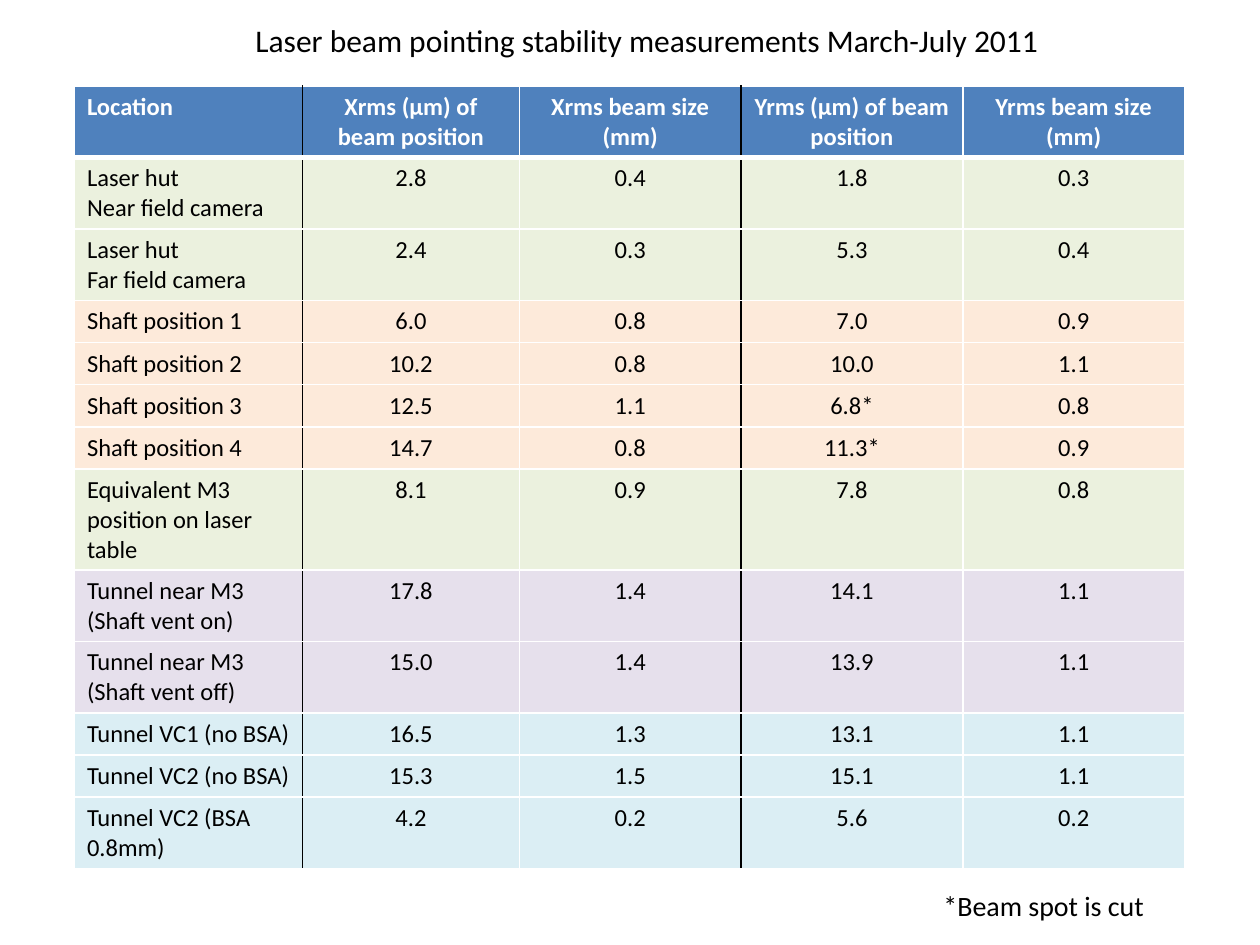
from lxml import etree
from pptx import Presentation
from pptx.dml.color import RGBColor
from pptx.enum.text import MSO_AUTO_SIZE, PP_ALIGN
from pptx.oxml.ns import qn
from pptx.util import Cm, Pt

LEFT, CENTER = PP_ALIGN.LEFT, PP_ALIGN.CENTER
FIT_SHAPE = MSO_AUTO_SIZE.SHAPE_TO_FIT_TEXT
FONT = "Calibri"
BLACK, WHITE, BLUE = "000000", "FFFFFF", "4F81BD"
GREEN, ORANGE, PURPLE, AQUA = "EBF1DE", "FDEADA", "E6E0EC", "DBEEF4"
COL_WIDTHS = [4.6, 4.37, 4.47, 4.47, 4.47]
DARK_EDGES = {1, 3}

# Each row: fill, number of text lines, cell texts
ROWS = [
    (BLUE, 2, ["Location", "Xrms (μm) of beam position", "Xrms beam size (mm)",
               "Yrms (μm) of beam position", "Yrms beam size (mm)"]),
    (GREEN, 2, ["Laser hut\nNear field camera", "2.8", "0.4", "1.8", "0.3"]),
    (GREEN, 2, ["Laser hut\nFar field camera", "2.4", "0.3", "5.3", "0.4"]),
    (ORANGE, 1, ["Shaft position 1", "6.0", "0.8", "7.0", "0.9"]),
    (ORANGE, 1, ["Shaft position 2", "10.2", "0.8", "10.0", "1.1"]),
    (ORANGE, 1, ["Shaft position 3", "12.5", "1.1", "6.8*", "0.8"]),
    (ORANGE, 1, ["Shaft position 4", "14.7", "0.8", "11.3*", "0.9"]),
    (GREEN, 3, ["Equivalent M3 position on laser table", "8.1", "0.9", "7.8", "0.8"]),
    (PURPLE, 2, ["Tunnel near M3\n(Shaft vent on)", "17.8", "1.4", "14.1", "1.1"]),
    (PURPLE, 2, ["Tunnel near M3\n(Shaft vent off)", "15.0", "1.4", "13.9", "1.1"]),
    (AQUA, 1, ["Tunnel VC1 (no BSA)", "16.5", "1.3", "13.1", "1.1"]),
    (AQUA, 1, ["Tunnel VC2 (no BSA)", "15.3", "1.5", "15.1", "1.1"]),
    (AQUA, 2, ["Tunnel VC2 (BSA 0.8mm)", "4.2", "0.2", "5.6", "0.2"]),
]


def rgb(color):
    """Turn a hex string into a colour."""
    return RGBColor.from_string(color)


def write_text(tf, text, size, color=BLACK, bold=False, align=LEFT):
    """Write one paragraph per line of text in a single format."""
    tf.text = text
    for p in tf.paragraphs:
        p.alignment = align
        for r in p.runs:
            values = {"name": FONT, "size": Pt(size), "bold": bold}
            for name, value in values.items():
                setattr(r.font, name, value)
            r.font.color.rgb = rgb(color)


def add_label(s, text, left, top, width, height, size):
    """Add an unwrapped text box that fits its text."""
    tf = s.shapes.add_textbox(Cm(left), Cm(top), Cm(width), Cm(height)).text_frame
    write_text(tf, text, size)
    tf.word_wrap = False
    tf.auto_size = FIT_SHAPE


def add_border(cell, side, color, width):
    """Append one solid border line to a cell."""
    tc_pr = cell._tc.get_or_add_tcPr()
    ln = etree.SubElement(tc_pr, qn(f"a:ln{side}"), w=str(Pt(width)))
    fill = etree.SubElement(ln, qn("a:solidFill"))
    etree.SubElement(fill, qn("a:srgbClr"), val=color)


def format_cell(cell, text, fill, row, col):
    """Write, border and fill one table cell."""
    header = row == 0
    write_text(cell.text_frame, text, 14, WHITE if header else BLACK,
               header, CENTER if col else LEFT)
    for side, edge in (("L", col), ("R", col + 1)):
        add_border(cell, side, BLACK if edge in DARK_EDGES else WHITE, 1)
    for side, edge in (("T", row), ("B", row + 1)):
        add_border(cell, side, WHITE, 3 if edge == 1 else 1)
    cell.fill.solid()
    cell.fill.fore_color.rgb = rgb(fill)


def add_measurements(s, left, top):
    """Add the table of beam measurements."""
    heights = [0.26 + 0.59 * lines for _, lines, _ in ROWS]
    table = s.shapes.add_table(len(ROWS), len(COL_WIDTHS), Cm(left), Cm(top),
                               Cm(sum(COL_WIDTHS)), Cm(sum(heights))).table
    table.horz_banding = False
    for column, width in zip(table.columns, COL_WIDTHS):
        column.width = Cm(width)
    for i, (fill, _, texts) in enumerate(ROWS):
        table.rows[i].height = Cm(heights[i])
        for j, text in enumerate(texts):
            format_cell(table.cell(i, j), text, fill, i, j)


def main():
    """Build and save the slide."""
    prs = Presentation()
    prs.slide_width, prs.slide_height = Cm(25.4), Cm(19.05)
    s = prs.slides.add_slide(prs.slide_layouts[6])
    add_label(s, "Laser beam pointing stability measurements March-July 2011",
              4.9, 0.3, 16.33, 1.03, 18)
    add_measurements(s, 1.5, 1.73)
    add_label(s, "*Beam spot is cut", 18.77, 17.78, 4.6, 0.94, 16)
    prs.save("out.pptx")


if __name__ == "__main__":
    main()
